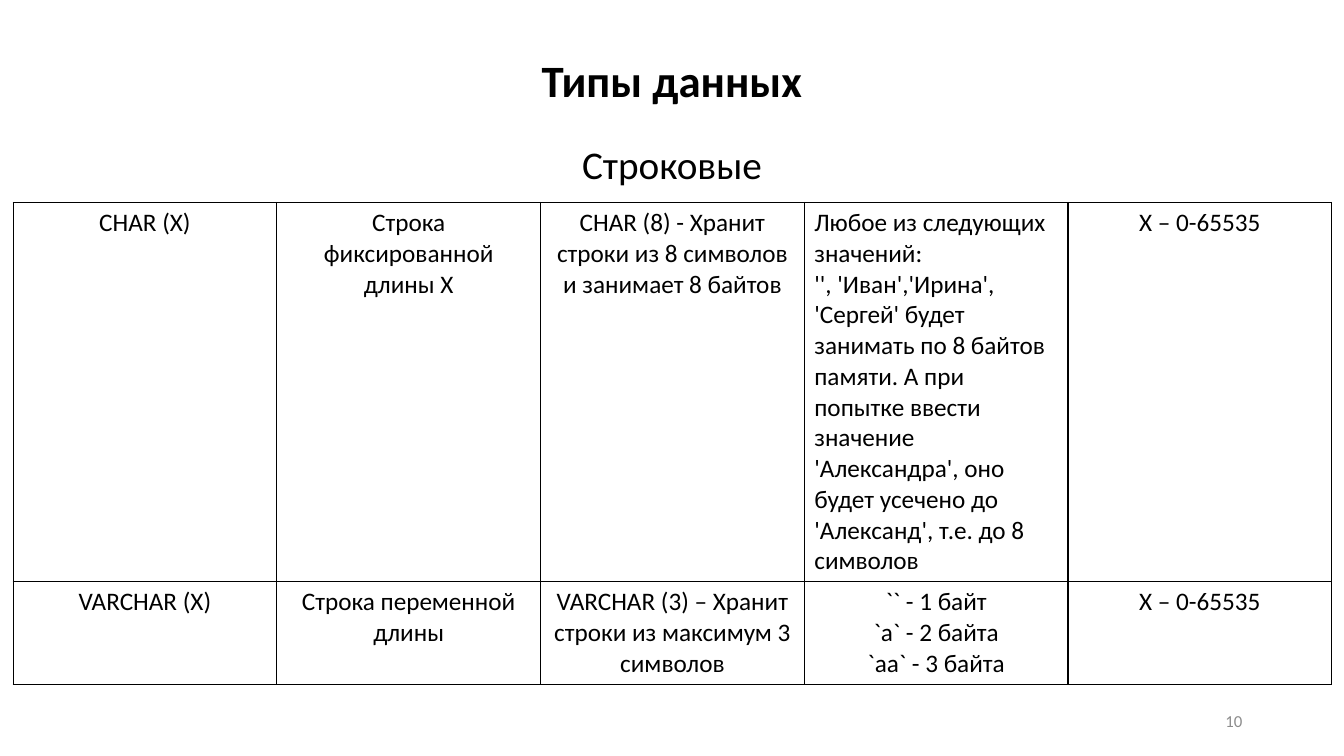
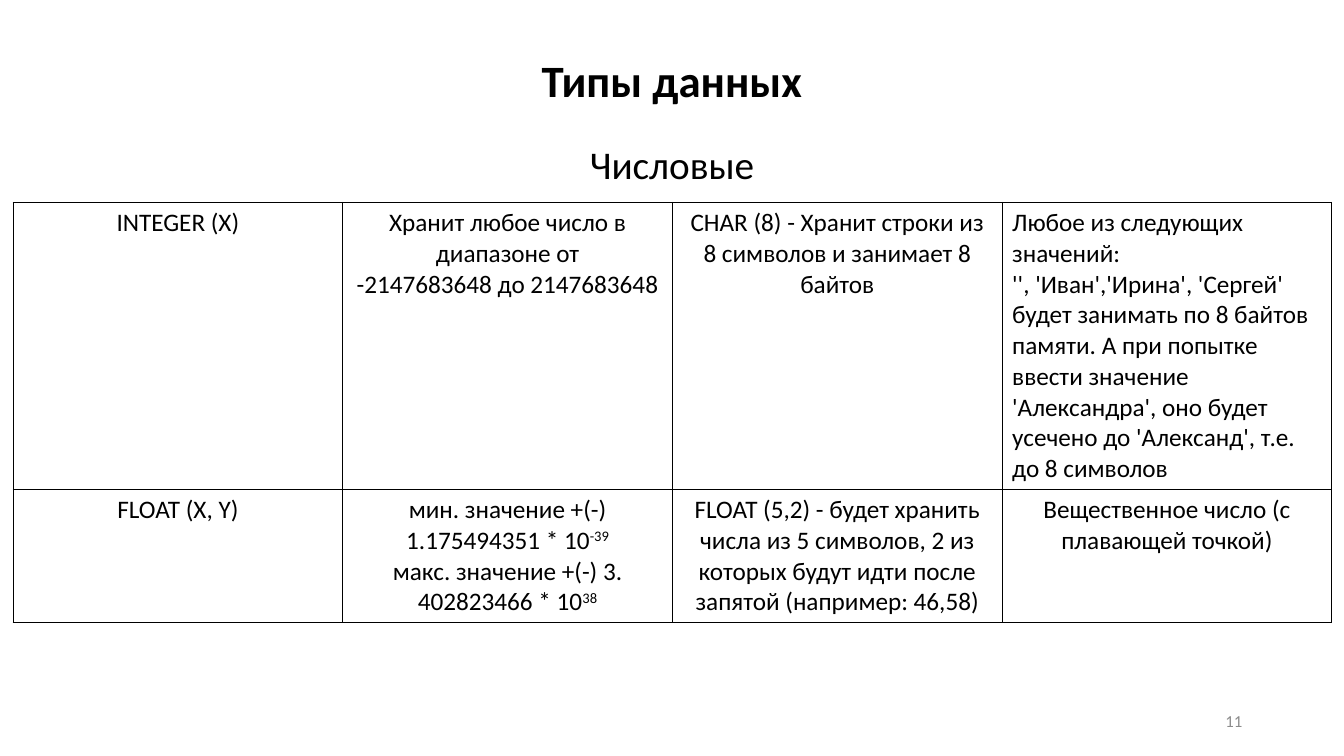
"""Build two slides that describe SQL string and numeric data types."""
from lxml import etree
from pptx import Presentation
from pptx.dml.color import RGBColor
from pptx.enum.text import MSO_ANCHOR, MSO_AUTO_SIZE, PP_ALIGN
from pptx.oxml.ns import qn
from pptx.util import Inches, Pt

LEFT, CENTER, RIGHT = PP_ALIGN.LEFT, PP_ALIGN.CENTER, PP_ALIGN.RIGHT
TOP, MIDDLE = MSO_ANCHOR.TOP, MSO_ANCHOR.MIDDLE
NO_AUTOFIT = MSO_AUTO_SIZE.NONE
TITLE_ONLY = 5
FONT = "Calibri"
COLORS = {"text": "000000", "border": "000000", "number": "8C8C8C"}
PAGE_WIDTH, PAGE_HEIGHT = 13.33, 7.5
TABLE_LEFT, TABLE_TOP, TABLE_WIDTH = 0.13, 2.01, 13.08

CHAR_USE = "CHAR (8) - Хранит строки из 8 символов и занимает 8 байтов"
CHAR_EXAMPLES = (
    "Любое из следующих значений:\n"
    "'', 'Иван','Ирина', 'Сергей' будет занимать по 8 байтов памяти. "
    "А при попытке ввести значение 'Александра', оно будет усечено "
    "до 'Александ', т.е. до 8 символов"
)
STRING_TYPES = [
    ["CHAR (X)", "Строка фиксированной длины Х", CHAR_USE, CHAR_EXAMPLES, "X – 0-65535"],
    ["VARCHAR (X)", "Строка переменной длины",
     "VARCHAR (3) – Хранит строки из максимум 3 символов",
     "`` - 1 байт\n`a` - 2 байта\n`aa` - 3 байта", "Х – 0-65535"],
]
NUMERIC_TYPES = [
    ["INTEGER (X)", "Хранит любое число в диапазоне от\n-2147683648 до 2147683648",
     CHAR_USE, CHAR_EXAMPLES],
    ["FLOAT (X, Y)",
     "мин. значение +(-) 1.175494351 * 10^-39^\n"
     "макс. значение +(-) 3. 402823466 * 10^38^",
     "FLOAT (5,2) - будет хранить числа из 5 символов, 2 из которых "
     "будут идти после запятой (например: 46,58)",
     "Вещественное число (с плавающей точкой)"],
]


def write_text(frame, text, size=18, bold=False, color="text", align=CENTER):
    """Fill a frame with one paragraph per line; ^marks^ enclose superscript."""
    for index, line in enumerate(text.split("\n")):
        para = frame.add_paragraph() if index else frame.paragraphs[0]
        para.alignment = align
        for part, words in enumerate(line.split("^")):
            if not words:
                continue
            span = para.add_run()
            span.text = words
            span.font.name = FONT
            span.font.size = Pt(size)
            span.font.bold = bold
            span.font.color.rgb = RGBColor.from_string(COLORS[color])
            if part % 2:
                span.font._element.set("baseline", "30000")


class TypeDeck:
    """Hold the shared style and the current page."""

    def __init__(self):
        """Open an empty wide deck."""
        self.deck = Presentation()
        self.deck.slide_width = Inches(PAGE_WIDTH)
        self.deck.slide_height = Inches(PAGE_HEIGHT)
        self.page = None

    def add_page(self, title, subtitle, number):
        """Start a page with its title, subtitle and number."""
        self.page = self.deck.slides.add_slide(self.deck.slide_layouts[TITLE_ONLY])
        self.place_text(self.page.shapes.title, 0, 0.47, PAGE_WIDTH, 0.64,
                        title, size=32, bold=True)
        self.add_text(0, 1.34, PAGE_WIDTH, 0.57, subtitle, size=28)
        self.add_text(9.42, 6.95, 3, 0.4, str(number), anchor=MIDDLE,
                      size=12, color="number", align=RIGHT)

    def place_text(self, box, left, top, width, height, text, anchor=TOP, **style):
        """Position a box and write its text."""
        box.left, box.top = Inches(left), Inches(top)
        box.width, box.height = Inches(width), Inches(height)
        frame = box.text_frame
        frame.word_wrap = True
        frame.auto_size = NO_AUTOFIT
        frame.vertical_anchor = anchor
        write_text(frame, text, **style)

    def add_text(self, left, top, width, height, text, **style):
        """Add a text box to the page."""
        box = self.page.shapes.add_textbox(0, 0, Inches(width), Inches(height))
        self.place_text(box, left, top, width, height, text, **style)

    def add_table(self, rows, heights):
        """Add a bordered table with equal columns."""
        table = self.page.shapes.add_table(
            len(rows), len(rows[0]), Inches(TABLE_LEFT), Inches(TABLE_TOP),
            Inches(TABLE_WIDTH), Inches(sum(heights))).table
        table.first_row = False
        table.horz_banding = False
        for row, height, texts in zip(table.rows, heights, rows):
            row.height = Inches(height)
            for cell, text in zip(row.cells, texts):
                align = LEFT if text == CHAR_EXAMPLES else CENTER
                write_text(cell.text_frame, text, align=align)
                self.add_borders(cell)
                cell.fill.background()

    def add_borders(self, cell):
        """Draw a thin line on each side of a cell."""
        properties = cell._tc.get_or_add_tcPr()
        for side in ("a:lnL", "a:lnR", "a:lnT", "a:lnB"):
            line = etree.SubElement(properties, qn(side), w=str(Pt(1)))
            fill = etree.SubElement(line, qn("a:solidFill"))
            etree.SubElement(fill, qn("a:srgbClr"), val=COLORS["border"])


def main():
    """Build and save the deck."""
    slides = TypeDeck()
    slides.add_page("Типы данных", "Строковые", 10)
    slides.add_table(STRING_TYPES, [3.7, 1])
    slides.add_page("Типы данных", "Числовые", 11)
    slides.add_table(NUMERIC_TYPES, [2.8, 1.3])
    slides.deck.save("out.pptx")


if __name__ == "__main__":
    main()
